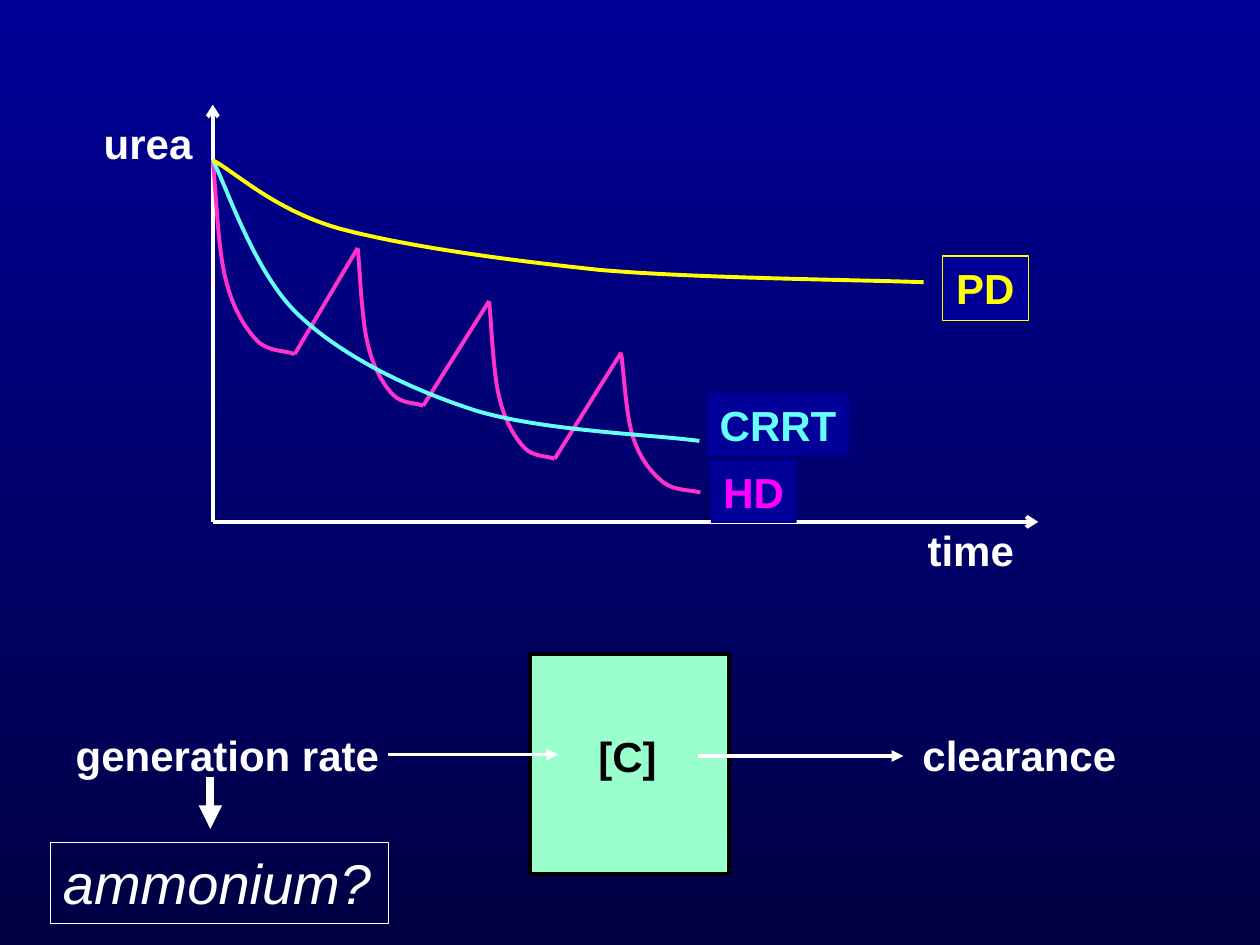
"""Build a slide comparing urea decline under PD, CRRT and HD, with a clearance model below."""
import dataclasses

import lxml.etree
import pptx
import pptx.dml.color
import pptx.enum.shapes
import pptx.enum.text
import pptx.oxml.ns
import pptx.util

Cm, Pt = pptx.util.Cm, pptx.util.Pt
qn = pptx.oxml.ns.qn
rgb = pptx.dml.color.RGBColor.from_string


@dataclasses.dataclass(frozen=True)
class Theme:
    top: str = "000099"
    bottom: str = "000044"
    white: str = "FFFFFF"
    black: str = "000000"
    pd: str = "FFFF00"
    crrt: str = "66FFFF"
    hd: str = "FF33CC"
    hd_label: str = "FF00FF"
    box: str = "99FFCC"
    font: str = "Arial"
    label_size: float = 24
    question_size: float = 32
    line: float = 2.25
    frame: float = 0.75
    bold_arrow: float = 4.5


theme = Theme()
deck = pptx.Presentation()
deck.slide_width, deck.slide_height = Cm(25.4), Cm(19.05)
slide = deck.slides.add_slide(deck.slide_layouts[6])
shapes = slide.shapes

backdrop = slide.background.fill
backdrop.gradient()
backdrop.gradient_angle = 270
for stop, color in zip(backdrop.gradient_stops, (theme.top, theme.bottom)):
    stop.color.rgb = rgb(color)


def add_line(start, end, color=theme.white, width=theme.line, arrow=None):
    line = shapes.add_connector(
        pptx.enum.shapes.MSO_CONNECTOR.STRAIGHT, *map(Cm, (*start, *end)))
    line.line.color.rgb = rgb(color)
    line.line.width = Pt(width)
    if arrow:
        lxml.etree.SubElement(line.line._get_or_add_ln(), qn("a:tailEnd"), type=arrow)
    lxml.etree.SubElement(line._element.spPr, qn("a:effectLst"))


def add_label(text, box, color=theme.white, fill=None, frame=None,
              size=theme.label_size, italic=False):
    if fill or frame:
        label = shapes.add_shape(pptx.enum.shapes.MSO_SHAPE.RECTANGLE, *map(Cm, box))
        label.shadow.inherit = False
        label.fill.background()
        label.line.fill.background()
    else:
        label = shapes.add_textbox(*map(Cm, box))
    if fill:
        label.fill.solid()
        label.fill.fore_color.rgb = rgb(fill)
    if frame:
        label.line.color.rgb = rgb(frame)
        label.line.width = Pt(theme.frame)
    frame_text = label.text_frame
    frame_text.text = text
    frame_text.word_wrap = italic
    frame_text.vertical_anchor = pptx.enum.text.MSO_ANCHOR.TOP
    paragraph = frame_text.paragraphs[0]
    align = pptx.enum.text.PP_ALIGN
    paragraph.alignment = align.LEFT if italic else align.CENTER
    font = paragraph.runs[0].font
    font.name, font.size = theme.font, Pt(size)
    font.bold, font.italic = not italic, italic
    font.color.rgb = rgb(color)


origin = (4.29, 10.52)
add_line(origin, (4.29, 2.11), arrow="arrow")
add_line(origin, (20.93, 10.52), arrow="arrow")

dip_profile = [(0, 0), (0.03, 0.1), (0.06, 0.45), (0.15, 0.6), (0.23, 0.75),
               (0.38, 0.86), (0.54, 0.93), (0.68, 0.99), (0.89, 0.98), (1, 1)]
sessions = [(4.29, 3.23, 1.65, 3.91), (7.21, 5, 1.32, 3.18),
            (9.86, 6.07, 1.32, 3.18), (12.52, 7.11, 1.6, 2.82)]
curves = [(theme.hd, [(left + u * width, top + v * drop) for u, v in dip_profile])
          for left, top, width, drop in sessions]
curves += [
    (theme.crrt, [(4.29, 3.23), (4.57, 3.76), (5.13, 5.51), (6.02, 6.35), (6.91, 7.19),
                  (8.26, 7.85), (9.6, 8.28), (10.97, 8.69), (13.16, 8.76), (14.1, 8.89)]),
    (theme.pd, [(4.29, 3.23), (4.72, 3.45), (5.51, 4.22), (6.81, 4.6), (8.1, 4.95),
                (10.08, 5.23), (12.07, 5.44), (14.02, 5.61), (17.25, 5.64), (18.62, 5.69)]),
]

for (left, top, width, drop), rebound in zip(sessions, sessions[1:]):
    add_line((left + width, top + drop), rebound[:2], theme.hd)

for color, points in curves:
    start, *controls = [(Cm(x), Cm(y)) for x, y in points]
    builder = shapes.build_freeform(*start)
    builder.add_line_segments(controls, close=False)
    curve = builder.convert_to_shape()
    curve.shadow.inherit = False
    curve.fill.background()
    curve.line.color.rgb = rgb(color)
    curve.line.width = Pt(theme.line)
    segments = list(curve._element.iter(qn("a:lnTo")))
    for first in range(0, len(segments), 3):
        bezier = lxml.etree.Element(qn("a:cubicBezTo"))
        segments[first].addprevious(bezier)
        for segment in segments[first:first + 3]:
            bezier.append(segment[0])
            segment.getparent().remove(segment)

add_label("time", (18.44, 10.44, 2.26, 1.27))
add_label("urea", (1.83, 2.24, 2.31, 1.27))
add_label("PD", (19, 5.16, 1.73, 1.3), theme.pd, theme.top, theme.pd)
add_label("HD", (14.33, 9.27, 1.73, 1.27), theme.hd_label, theme.top)
add_label("CRRT", (14.25, 7.92, 2.87, 1.27), theme.crrt, theme.top)

compartment = shapes.add_shape(
    pptx.enum.shapes.MSO_SHAPE.RECTANGLE, Cm(10.69), Cm(13.18), Cm(4.01), Cm(4.45))
compartment.shadow.inherit = False
compartment.fill.solid()
compartment.fill.fore_color.rgb = rgb(theme.box)
compartment.line.color.rgb = rgb(theme.black)
compartment.line.width = Pt(theme.line)

add_label("[C]", (11.81, 14.61, 1.68, 1.27), theme.black)
add_line((7.82, 15.21), (11.25, 15.21), arrow="triangle")
add_label("generation rate", (1.27, 14.58, 6.63, 1.27))
add_line((14.07, 15.24), (18.21, 15.24), arrow="triangle")
add_label("clearance", (18.34, 14.58, 4.42, 1.27))
add_line((4.24, 15.67), (4.24, 16.71), width=theme.bold_arrow, arrow="triangle")
add_label("ammonium?", (1.02, 16.99, 6.81, 1.63), frame=theme.white,
          size=theme.question_size, italic=True)

deck.save("out.pptx")
